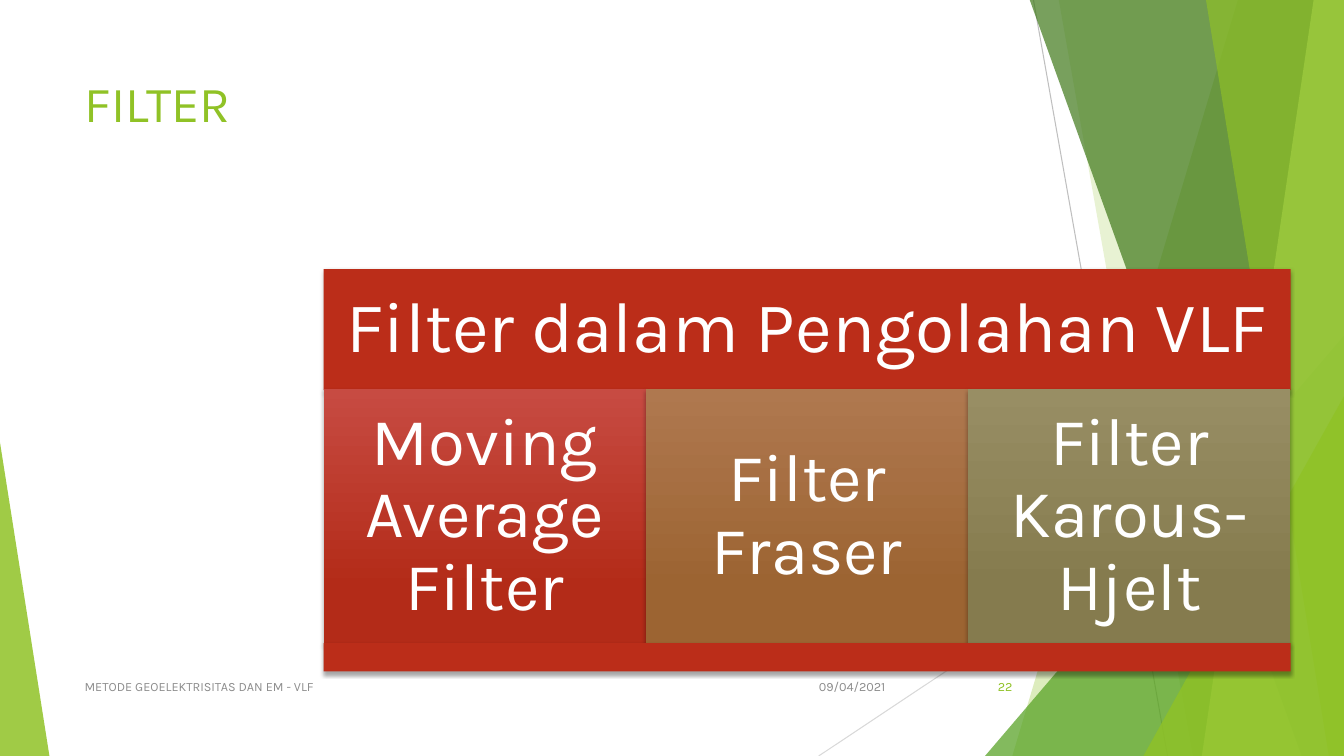
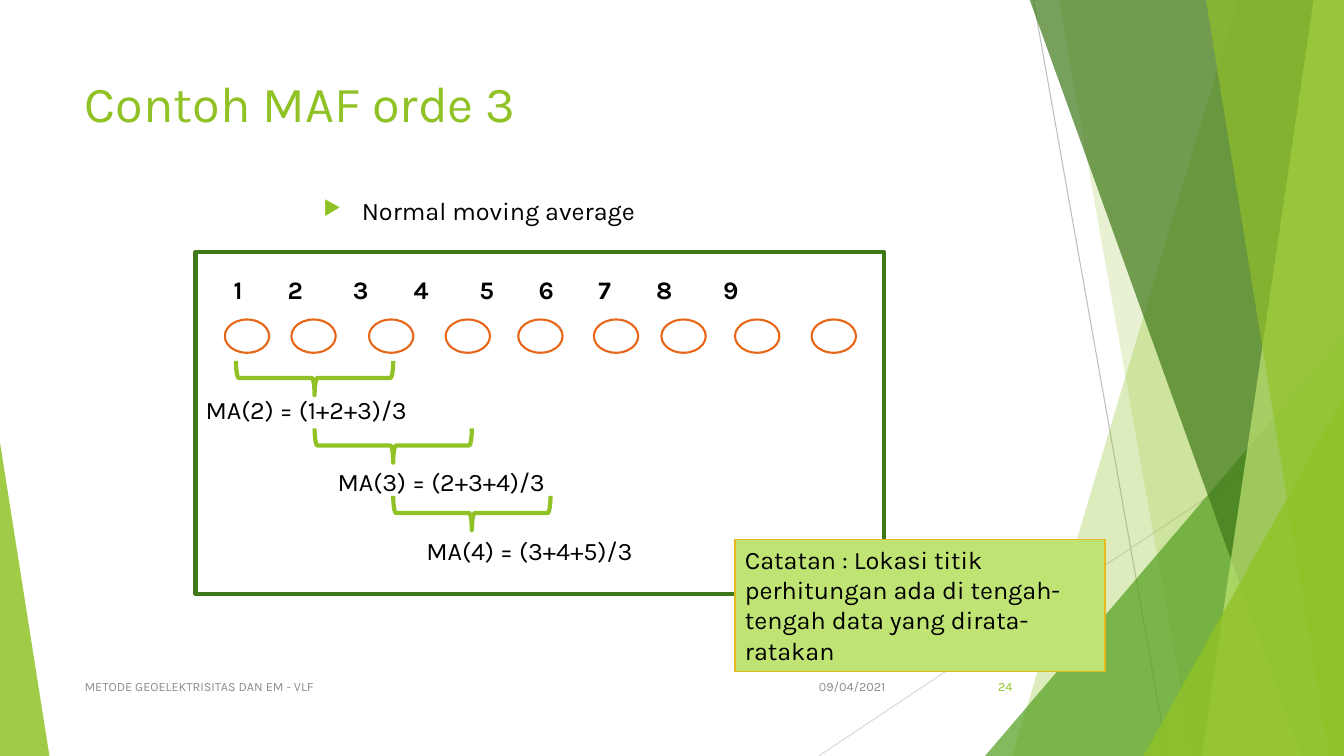
from typing import NamedTuple

from lxml import etree
from pptx import Presentation
from pptx.dml.color import RGBColor
from pptx.enum.shapes import MSO_CONNECTOR, MSO_SHAPE
from pptx.enum.text import MSO_ANCHOR, PP_ALIGN
from pptx.oxml.ns import qn
from pptx.util import Inches, Pt

RECT = MSO_SHAPE.RECTANGLE
OVAL = MSO_SHAPE.OVAL
BRACE = MSO_SHAPE.RIGHT_BRACE
WEDGE = MSO_SHAPE.ISOSCELES_TRIANGLE
STRAIGHT = MSO_CONNECTOR.STRAIGHT
TOP, MIDDLE = MSO_ANCHOR.TOP, MSO_ANCHOR.MIDDLE
LEFT, CENTER, RIGHT = PP_ALIGN.LEFT, PP_ALIGN.CENTER, PP_ALIGN.RIGHT

FONT = "Karla"
WIDE, HIGH = 13.33, 7.5
EDGE = -0.01
GREEN, LEAF, MOSS, LIME = "90C226", "54A021", "3F7819", "C0E474"
WHITE, BLACK, GREY = "FFFFFF", "000000", "8C8C8C"
RED, ORANGE, GOLD = "BB2D19", "E76618", "E6B91E"


class Box(NamedTuple):
    left: float
    top: float
    width: float
    height: float


class Style(NamedTuple):
    size: float = 18
    color: str = BLACK
    bold: bool = False
    align: PP_ALIGN = LEFT
    anchor: MSO_ANCHOR = TOP
    inset: float | None = None
    pitch: float | None = None


class Ray(NamedTuple):
    start: tuple[float, float]
    end: tuple[float, float]
    color: str


class Band(NamedTuple):
    """A slanted band that runs down to the right edge."""
    top: float
    foot: float
    color: str
    alpha: int


class Peak(NamedTuple):
    box: Box
    tip: float
    color: str
    alpha: int


class Cell(NamedTuple):
    text: str
    light: str
    dark: str


class Mean(NamedTuple):
    text: str
    left: float
    top: float


RAYS = [
    Ray((10.25, 0), (11.58, HIGH), "BFBFBF"),
    Ray((WIDE, 4.03), (8.12, HIGH), "D9D9D9"),
]
# Back to front
DECOR = [
    Band(12.28, 10.04, GREEN, 30),
    Band(10.5, 11.83, GREEN, 20),
    Peak(Box(9.77, 3.33, 3.56, 4.17), 1, LEAF, 72),
    Band(10.21, 12.91, MOSS, 70),
    Band(13.03, 11.92, LIME, 70),
    Band(11.96, 13.18, GREEN, 65),
    Peak(Box(11.34, 3.93, 1.99, 3.57), 1, GREEN, 80),
    Peak(Box(0, 4.39, 0.49, 3.11), 0, GREEN, 85),
]
CELLS = [
    Cell("Moving Average Filter", "C74B42", "B32B18"),
    Cell("Filter Fraser", "AF784F", "9C6432"),
    Cell("Filter Karous-Hjelt", "988E64", "857B4E"),
]
DOTS = [2.23, 2.89, 3.66, 4.42, 5.14, 5.89, 6.56, 7.29, 8.05]
STOPS = [0.61, 1.26, 1.86, 2.51, 3.1, 3.68, 4.27, 4.93]
MEANS = [
    Mean("MA(2) = (1+2+3)/3", 1.94, 3.86),
    Mean("MA(3) = (2+3+4)/3", 3.25, 4.58),
    Mean("MA(4) = (3+4+5)/3", 4.13, 5.26),
]


def rgb(code: str) -> RGBColor:
    return RGBColor.from_string(code)


def node(parent, tag: str, **attrs):
    return etree.SubElement(parent, qn(tag), {k: str(v) for k, v in attrs.items()})


def paint(shape, fill: str | None = None, alpha: int = 100,
          line: str | None = None, weight: float = 1) -> None:
    shape.shadow.inherit = False
    if fill:
        shape.fill.solid()
        shape.fill.fore_color.rgb = rgb(fill)
        if alpha < 100:
            color = shape.element.spPr.find(".//" + qn("a:srgbClr"))
            node(color, "a:alpha", val=alpha * 1000)
    else:
        shape.fill.background()
    if line:
        shape.line.color.rgb = rgb(line)
        shape.line.width = Pt(weight)
    else:
        shape.line.fill.background()


def shade(shape) -> None:
    """Give a soft shadow just below the shape."""
    effects = shape.element.spPr.find(qn("a:effectLst"))
    drop = node(effects, "a:outerShdw", blurRad=Pt(3), dist=Pt(2),
                dir=5400000, algn="ctr", rotWithShape=0)
    color = node(drop, "a:srgbClr", val=BLACK)
    node(color, "a:alpha", val=35000)


def write(shape, text: str, style: Style):
    frame = shape.text_frame
    frame.word_wrap = True
    frame.vertical_anchor = style.anchor
    if style.inset is not None:
        gap = Inches(style.inset)
        frame.margin_left = frame.margin_right = gap
        frame.margin_top = frame.margin_bottom = gap
    para = frame.paragraphs[0]
    para.alignment = style.align
    if style.pitch:
        para.line_spacing = style.pitch
    run = para.add_run()
    run.text = text
    font = run.font
    font.name, font.size, font.bold = FONT, Pt(style.size), style.bold
    font.color.rgb = rgb(style.color)
    return para


def shape(slide, kind: MSO_SHAPE, box: Box, **look):
    item = slide.shapes.add_shape(kind, *map(Inches, box))
    paint(item, **look)
    return item


def label(slide, box: Box, text: str, style: Style = Style()):
    return write(slide.shapes.add_textbox(*map(Inches, box)), text, style)


def ray(slide, part: Ray) -> None:
    ends = map(Inches, part.start + part.end)
    line = slide.shapes.add_connector(STRAIGHT, *ends)
    line.line.color.rgb = rgb(part.color)
    line.line.width = Pt(0.75)
    node(line.element.spPr, "a:effectLst")


def band(slide, part: Band) -> None:
    pen = slide.shapes.build_freeform(Inches(part.top), Inches(EDGE))
    spots = [(WIDE, EDGE), (WIDE, HIGH), (part.foot, HIGH)]
    pen.add_line_segments([(Inches(x), Inches(y)) for x, y in spots], close=True)
    paint(pen.convert_to_shape(), part.color, part.alpha)


def peak(slide, part: Peak) -> None:
    item = shape(slide, WEDGE, part.box, fill=part.color, alpha=part.alpha)
    item.adjustments[0] = part.tip


def start(deck, title: str, number: str):
    """Add a slide with the shared backdrop, title and footer."""
    slide = deck.slides.add_slide(deck.slide_layouts[5])
    for part in RAYS:
        ray(slide, part)
    for part in DECOR:
        draw = band if isinstance(part, Band) else peak
        draw(slide, part)
    head = slide.shapes.title
    head.left, head.top, head.width, head.height = map(Inches, (0.74, 0.67, 9.4, 1.44))
    write(head, title, Style(36, GREEN))
    foot = Style(9, GREY, anchor=MIDDLE)
    label(slide, Box(7.88, 6.61, 1, 0.4), "09/04/2021", foot._replace(align=RIGHT))
    label(slide, Box(0.74, 6.61, 6.89, 0.4), "METODE GEOELEKTRISITAS DAN EM - VLF", foot)
    label(slide, Box(9.39, 6.61, 0.75, 0.4), number,
          foot._replace(color=GREEN, align=RIGHT))
    return slide


def filters(deck) -> None:
    slide = start(deck, "FILTER", "22")
    left, wide = 3.21, 9.59
    big = Style(51, WHITE, align=CENTER, anchor=MIDDLE, inset=0.21, pitch=0.9)
    # Header bar
    bar = shape(slide, RECT, Box(left, 2.67, wide, 1.2), fill=RED)
    shade(bar)
    write(bar, "Filter dalam Pengolahan VLF", big)
    # Three filter kinds
    step = wide / len(CELLS)
    for i, cell in enumerate(CELLS):
        tile = shape(slide, RECT, Box(left + i * step, 3.86, step, 2.52))
        tile.fill.gradient()
        tile.fill.gradient_angle = 270
        for stop, color, spot in zip(tile.fill.gradient_stops,
                                     (cell.light, cell.dark), (0, 0.78)):
            stop.color.rgb = rgb(color)
            stop.position = spot
        shade(tile)
        write(tile, cell.text, big._replace(size=48, inset=0.2))
    # Base bar
    shade(shape(slide, RECT, Box(left, 6.38, wide, 0.28), fill=RED))


def sample(deck) -> None:
    slide = start(deck, "Contoh MAF orde 3", "24")
    # Bullet line
    para = label(slide, Box(3.11, 1.89, 9.59, 3.99), "Normal moving average")
    para.space_before = Pt(10)
    props = para._p.get_or_add_pPr()
    props.set("marL", str(Inches(0.38)))
    props.set("indent", str(Inches(-0.38)))
    node(node(props, "a:buClr"), "a:srgbClr", val=GREEN)
    node(props, "a:buSzPct", val=80000)
    node(props, "a:buChar", char="▶")
    # Data points and their numbers
    for left in DOTS:
        shape(slide, OVAL, Box(left, 3.17, 0.44, 0.33),
              fill=WHITE, line=ORANGE, weight=1.5)
    digits = "\t".join(str(i + 1) for i in range(len(DOTS)))
    para = label(slide, Box(2.22, 2.67, 8.56, 0.4), digits, Style(bold=True))
    tabs = node(para._p.get_or_add_pPr(), "a:tabLst")
    for stop in STOPS:
        node(tabs, "a:tab", pos=Inches(stop), algn="ctr")
    # Averages of three
    for i, mean in enumerate(MEANS):
        brace = shape(slide, BRACE, Box(2.95 + i * 0.78, 2.97 + i * 0.67, 0.34, 1.56),
                      line=GREEN, weight=3)
        brace.rotation = 90
        label(slide, Box(mean.left, mean.top, 3.2, 0.4), mean.text)
    # Frame and note
    shape(slide, RECT, Box(1.94, 2.5, 6.83, 3.39), line=MOSS, weight=3)
    note = shape(slide, RECT, Box(7.29, 5.35, 3.67, 1.31), fill=LIME, line=GOLD)
    write(note, "Catatan : Lokasi titik perhitungan ada di tengah-tengah data "
                "yang dirata-ratakan", Style())


def main() -> None:
    deck = Presentation()
    deck.slide_width, deck.slide_height = Inches(WIDE), Inches(HIGH)
    filters(deck)
    sample(deck)
    deck.save("out.pptx")


if __name__ == "__main__":
    main()
